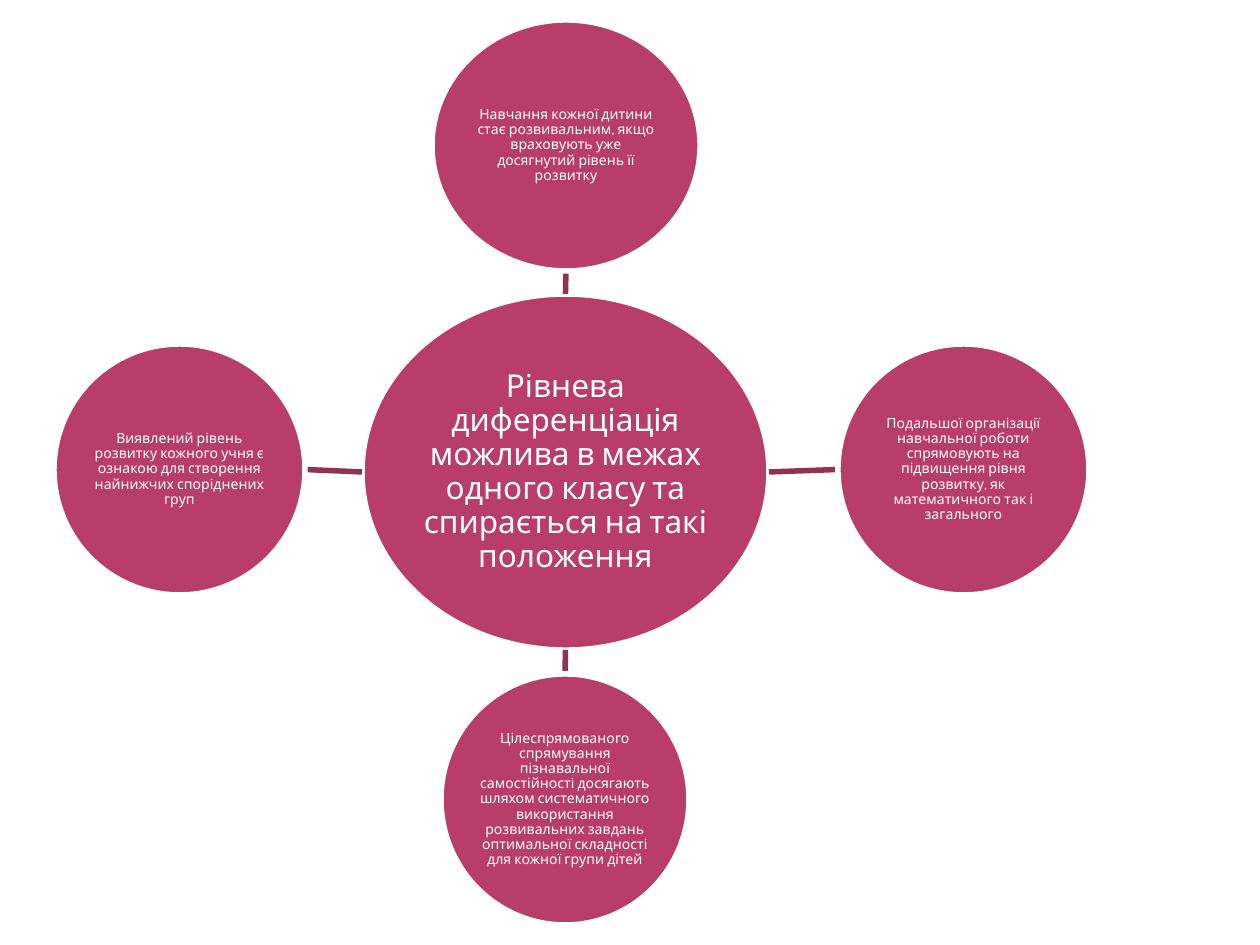
from collections import namedtuple

from lxml import etree
from pptx import Presentation
from pptx import util as u
from pptx.dml.color import RGBColor
from pptx.enum import shapes, text
from pptx.oxml.ns import qn

PX = 914400 / 126  # EMU per px
ROSE = RGBColor(0xB8, 0x3D, 0x68)
PLUM = RGBColor(0x93, 0x31, 0x53)
WHITE = RGBColor(0xFF, 0xFF, 0xFF)
FONT = "Cabin"
LINE_WIDTH = u.Pt(3.15)

Box = namedtuple("Box", "left top width height")

HUB_BOX = Box(362, 294, 407, 356)
HUB_TEXT = ("Рівнева диференціація можлива в межах одного класу "
            "та спирається на такі положення")

# Side of the hub, circle, wording
PRINCIPLES = [
    ("top", Box(432, 20, 268, 251),
     "Навчання кожної дитини стає розвивальним, якщо враховують уже "
     "досягнутий рівень її розвитку"),
    ("right", Box(838, 344, 251, 251),
     "Подальшої організації навчальної роботи спрямовують на підвищення "
     "рівня розвитку, як математичного так і загального"),
    ("bottom", Box(441, 674, 248, 251),
     "Цілеспрямованого спрямування пізнавальної самостійності досягають "
     "шляхом систематичного використання розвивальних завдань оптимальної "
     "складності для кожної групи дітей"),
    ("left", Box(54, 344, 251, 251),
     "Виявлений рівень розвитку кожного учня є ознакою для створення "
     "найнижчих споріднених груп"),
]
OPPOSITE = {"top": "bottom", "bottom": "top", "left": "right", "right": "left"}


def px(value):
    return u.Emu(round(value * PX))


def write(shape, wording, size, color=WHITE, inset=1):
    frame = shape.text_frame
    frame.word_wrap = True
    frame.vertical_anchor = text.MSO_ANCHOR.MIDDLE
    frame.margin_left = frame.margin_right = px(inset)
    frame.margin_top = frame.margin_bottom = px(inset)
    paragraph = frame.paragraphs[0]
    paragraph.alignment = text.PP_ALIGN.CENTER
    paragraph.line_spacing = 0.9
    run = paragraph.add_run()
    run.text = wording
    run.font.name = FONT
    run.font.size = u.Pt(size)
    run.font.color.rgb = color


def add_circle(slide, box, wording, size):
    circle = slide.shapes.add_shape(shapes.MSO_SHAPE.OVAL, *map(px, box))
    circle.shadow.inherit = False
    circle.fill.solid()
    circle.fill.fore_color.rgb = ROSE
    circle.line.color.rgb = WHITE
    circle.line.width = LINE_WIDTH
    write(circle, wording, size)


def side_middle(box, side):
    middle_x = box.left + box.width / 2
    middle_y = box.top + box.height / 2
    return {
        "top": (middle_x, box.top),
        "bottom": (middle_x, box.top + box.height),
        "left": (box.left, middle_y),
        "right": (box.left + box.width, middle_y),
    }[side]


def add_spoke(slide, start, end):
    spoke = slide.shapes.add_connector(
        shapes.MSO_CONNECTOR.STRAIGHT, *map(px, start + end))
    spoke.line.color.rgb = PLUM
    spoke.line.width = LINE_WIDTH
    etree.SubElement(spoke._element.spPr, qn("a:effectLst"))


def add_radial_diagram(slide, hub):
    add_circle(slide, hub, HUB_TEXT, size=18)
    for side, box, wording in PRINCIPLES:
        # The white outline of each circle trims the end of its spoke
        add_spoke(slide, side_middle(hub, side),
                  side_middle(box, OPPOSITE[side]))
        add_circle(slide, box, wording, size=8)


def main():
    prs = Presentation()
    prs.slide_width = px(1260)
    prs.slide_height = px(945)
    slide = prs.slides.add_slide(prs.slide_layouts[6])
    add_radial_diagram(slide, HUB_BOX)
    prs.save("out.pptx")


if __name__ == "__main__":
    main()
